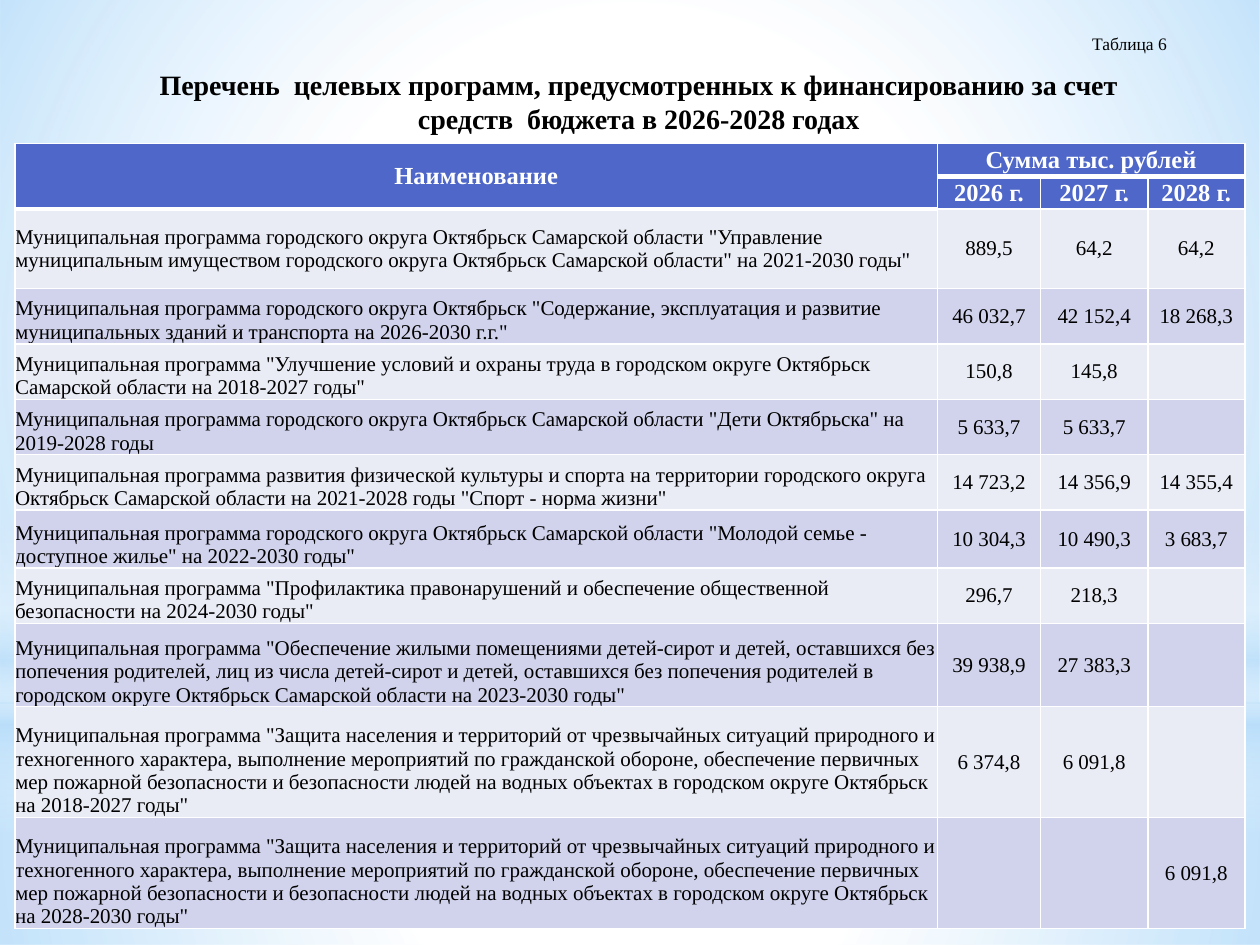
from dataclasses import dataclass

from lxml import etree
from pptx import Presentation
from pptx.dml.color import RGBColor
from pptx.enum.shapes import MSO_SHAPE
from pptx.enum.text import MSO_ANCHOR, MSO_AUTO_SIZE, PP_ALIGN
from pptx.oxml.ns import qn
from pptx.util import Inches, Pt

LEFT, CENTER, RIGHT = PP_ALIGN.LEFT, PP_ALIGN.CENTER, PP_ALIGN.RIGHT
TOP, MIDDLE, BOTTOM = MSO_ANCHOR.TOP, MSO_ANCHOR.MIDDLE, MSO_ANCHOR.BOTTOM
RECTANGLE, OVAL = MSO_SHAPE.RECTANGLE, MSO_SHAPE.OVAL


@dataclass(frozen=True)
class Theme:
    font: str = "Times New Roman"
    text: str = "000000"
    white: str = "FFFFFF"
    sky: str = "B4DCFA"
    header: str = "4E67C8"
    bands: tuple = ("E9EBF5", "D0D3EB")
    label_size: int = 10
    title_size: int = 16
    header_size: int = 14
    body_size: int = 12
    thin_border: int = 1
    thick_border: int = 3


THEME = Theme()

COLUMN_WIDTHS = [7.32, 0.82, 0.85, 0.77]
HEADER_HEIGHT = 0.26
YEARS = ["2026 г.", "2027 г.", "2028 г."]
PROTECTION = (
    'Муниципальная программа "Защита населения и территорий от чрезвычайных ситуаций '
    "природного и техногенного характера, выполнение мероприятий по гражданской обороне, "
    "обеспечение первичных мер пожарной безопасности и безопасности людей на водных объектах "
    "в городском округе Октябрьск на "
)
# Row height, programme name, amounts by year
PROGRAMMES = [
    (0.63, 'Муниципальная программа городского округа Октябрьск Самарской области "Управление '
           "муниципальным имуществом городского округа Октябрьск Самарской области\" "
           'на 2021-2030 годы"', ["889,5", "64,2", "64,2"]),
    (0.44, 'Муниципальная программа городского округа Октябрьск "Содержание, эксплуатация и '
           'развитие муниципальных зданий и транспорта на 2026-2030 г.г."',
     ["46 032,7", "42 152,4", "18 268,3"]),
    (0.44, 'Муниципальная программа "Улучшение условий и охраны труда в городском округе '
           'Октябрьск Самарской области на 2018-2027 годы"', ["150,8", "145,8", ""]),
    (0.44, 'Муниципальная программа городского округа Октябрьск Самарской области '
           '"Дети Октябрьска" на 2019-2028 годы', ["5 633,7", "5 633,7", ""]),
    (0.44, "Муниципальная программа развития физической культуры и спорта на территории "
           "городского округа Октябрьск Самарской области на 2021-2028 годы "
           '"Спорт - норма жизни"', ["14 723,2", "14 356,9", "14 355,4"]),
    (0.46, 'Муниципальная программа городского округа Октябрьск Самарской области "Молодой '
           'семье - доступное жилье" на 2022-2030 годы"',
     ["10 304,3", "10 490,3", "3 683,7"]),
    (0.44, 'Муниципальная программа "Профилактика правонарушений и обеспечение общественной '
           'безопасности на 2024-2030 годы"', ["296,7", "218,3", ""]),
    (0.66, 'Муниципальная программа "Обеспечение жилыми помещениями детей-сирот и детей, '
           "оставшихся без попечения родителей, лиц из числа детей-сирот и детей, оставшихся "
           "без попечения родителей в городском округе Октябрьск Самарской области "
           'на 2023-2030 годы"', ["39 938,9", "27 383,3", ""]),
    (0.88, PROTECTION + '2018-2027 годы"', ["6 374,8", "6 091,8", ""]),
    (0.88, PROTECTION + '2028-2030 годы"', ["", "", "6 091,8"]),
]


def write_text(paragraph, text, size, color=THEME.text, bold=False, align=CENTER, before=0):
    paragraph.alignment = align
    paragraph.space_before = Pt(before)
    run = paragraph.add_run()
    run.text = text
    run.font.name = THEME.font
    run.font.size = Pt(size)
    run.font.bold = bold
    run.font.color.rgb = RGBColor.from_string(color)


def add_color(parent, color, alpha=100):
    element = etree.SubElement(parent, qn("a:srgbClr"), val=color)
    if alpha < 100:
        etree.SubElement(element, qn("a:alpha"), val=str(alpha * 1000))


def add_glow(slide, kind, box, stops, radial=True):
    """Place a borderless shape with a translucent gradient."""
    shape = slide.shapes.add_shape(kind, *map(Inches, box))
    shape.shadow.inherit = False
    shape.line.fill.background()
    shape.fill.gradient()
    gradient = shape.element.spPr.find(qn("a:gradFill"))
    for child in list(gradient):
        gradient.remove(child)
    stop_list = etree.SubElement(gradient, qn("a:gsLst"))
    for position, color, alpha in stops:
        stop = etree.SubElement(stop_list, qn("a:gs"), pos=str(position * 1000))
        add_color(stop, color, alpha)
    if radial:
        direction = etree.SubElement(gradient, qn("a:path"), path="circle")
        etree.SubElement(direction, qn("a:fillToRect"), l="50000", t="50000", r="50000", b="50000")
    else:
        etree.SubElement(gradient, qn("a:lin"), ang="5400000", scaled="0")


def add_background(slide, box):
    left, top, width, height = box
    white, sky = THEME.white, THEME.sky
    horizon = 5.58
    add_glow(slide, RECTANGLE, (left, top + horizon, width, height - horizon),
             [(0, white, 91), (37, white, 76), (100, sky, 79)])
    add_glow(slide, RECTANGLE, (left, top, width, horizon),
             [(0, white, 89), (48, white, 62), (100, sky, 79)])
    add_glow(slide, RECTANGLE, (left, top + 4.12, width, 2.5),
             [(0, white, 0), (29, white, 30), (45, sky, 40),
              (55, white, 26), (65, sky, 60), (100, white, 0)], radial=False)
    add_glow(slide, OVAL, (left, top + 1.75, width, horizon),
             [(0, white, 100), (56, white, 0)])


def add_heading(slide, box):
    title = slide.shapes.title
    title.element.getparent().append(title.element)  # bring in front of the background
    title.left, title.top, title.width, title.height = map(Inches, box)
    frame = title.text_frame
    frame.word_wrap = True
    frame.auto_size = MSO_AUTO_SIZE.NONE
    frame.vertical_anchor = TOP
    write_text(frame.paragraphs[0], "Таблица 6", THEME.label_size, align=RIGHT)
    write_text(frame.add_paragraph(),
               "Перечень  целевых программ, предусмотренных к финансированию за счет "
               "средств  бюджета в 2026-2028 годах",
               THEME.title_size, bold=True, before=THEME.title_size / 2)


def style_cell(cell, fill, bottom_border=THEME.thin_border, anchor=MIDDLE):
    cell.margin_left = cell.margin_right = cell.margin_top = cell.margin_bottom = 0
    cell.vertical_anchor = anchor
    properties = cell._tc.get_or_add_tcPr()
    for side in "LRTB":
        width = bottom_border if side == "B" else THEME.thin_border
        line = etree.SubElement(properties, qn(f"a:ln{side}"), w=str(Pt(width)))
        add_color(etree.SubElement(line, qn("a:solidFill")), THEME.white)
    cell.fill.solid()
    cell.fill.fore_color.rgb = RGBColor.from_string(fill)


def add_programme_table(slide, box):
    heights = [HEADER_HEIGHT] * 2 + [height for height, _, _ in PROGRAMMES]
    table = slide.shapes.add_table(len(heights), len(COLUMN_WIDTHS), *map(Inches, box)).table
    table.first_row = table.horz_banding = False
    for column, width in zip(table.columns, COLUMN_WIDTHS):
        column.width = Inches(width)
    for row, height in zip(table.rows, heights):
        row.height = Inches(height)

    # Two-level header
    headers = [["Наименование", "Сумма тыс. рублей", "", ""], [""] + YEARS]
    for i, labels in enumerate(headers):
        for j, label in enumerate(labels):
            cell = table.cell(i, j)
            thick = i == 0 or j == 0
            style_cell(cell, THEME.header, THEME.thick_border if thick else THEME.thin_border)
            if label:
                write_text(cell.text_frame.paragraphs[0], label, THEME.header_size,
                           color=THEME.white, bold=True)
    table.cell(0, 0).merge(table.cell(1, 0))
    table.cell(0, 1).merge(table.cell(0, 3))

    # Programmes in alternating bands
    for i, (_, name, amounts) in enumerate(PROGRAMMES):
        for j, text in enumerate([name] + amounts):
            cell = table.cell(i + 2, j)
            style_cell(cell, THEME.bands[i % 2], anchor=BOTTOM if j == 0 and i > 0 else MIDDLE)
            if text:
                write_text(cell.text_frame.paragraphs[0], text, THEME.body_size,
                           align=CENTER if j else LEFT)


def main():
    presentation = Presentation()
    presentation.slide_width, presentation.slide_height = Inches(10), Inches(7.5)
    slide = presentation.slides.add_slide(presentation.slide_layouts.get_by_name("Title Only"))
    add_background(slide, (0, 0, 10, 7.5))
    add_heading(slide, (0.78, 0.21, 8.58, 0.94))
    add_programme_table(slide, (0.12, 1.14, 9.76, 6.23))
    presentation.save("out.pptx")


if __name__ == "__main__":
    main()
